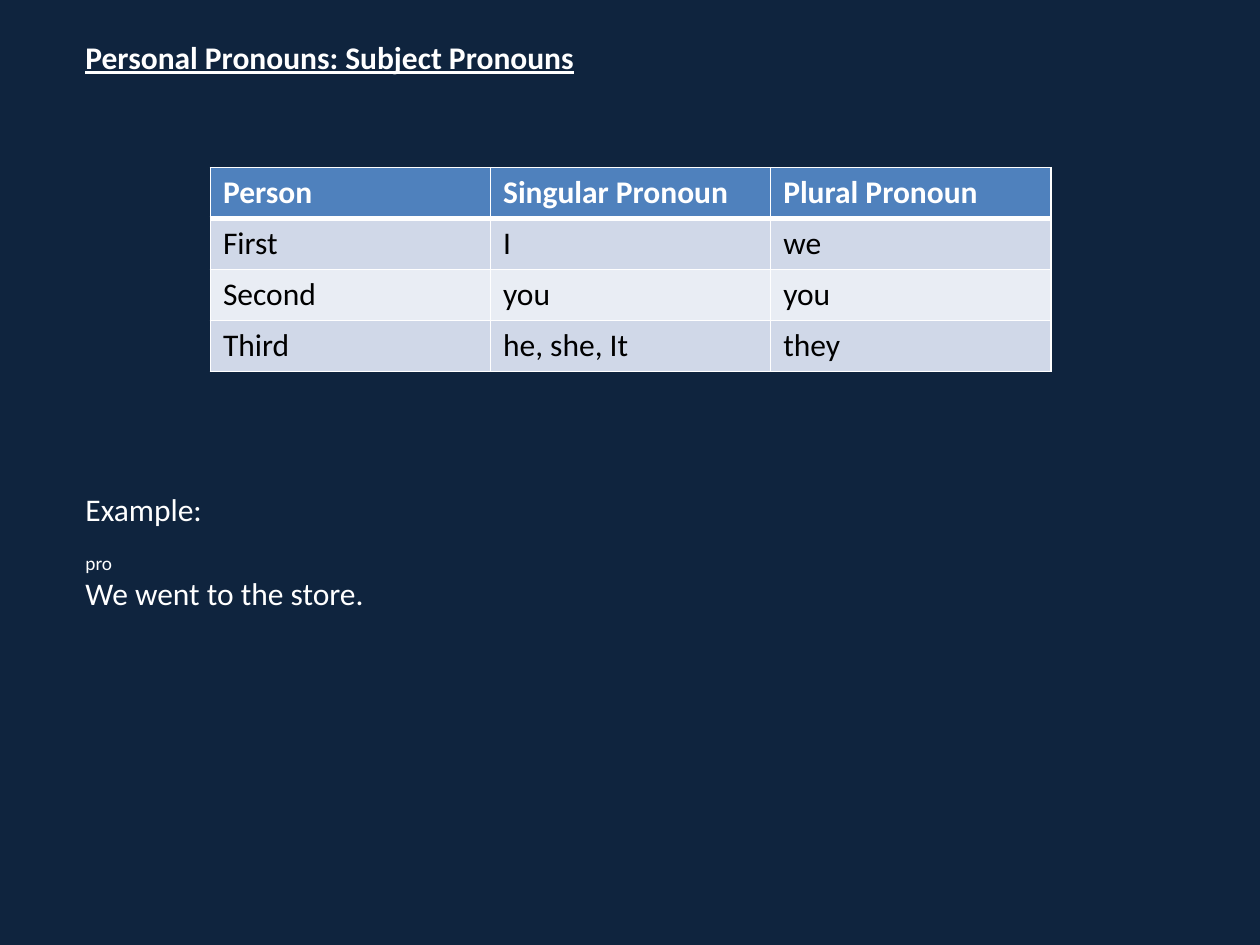
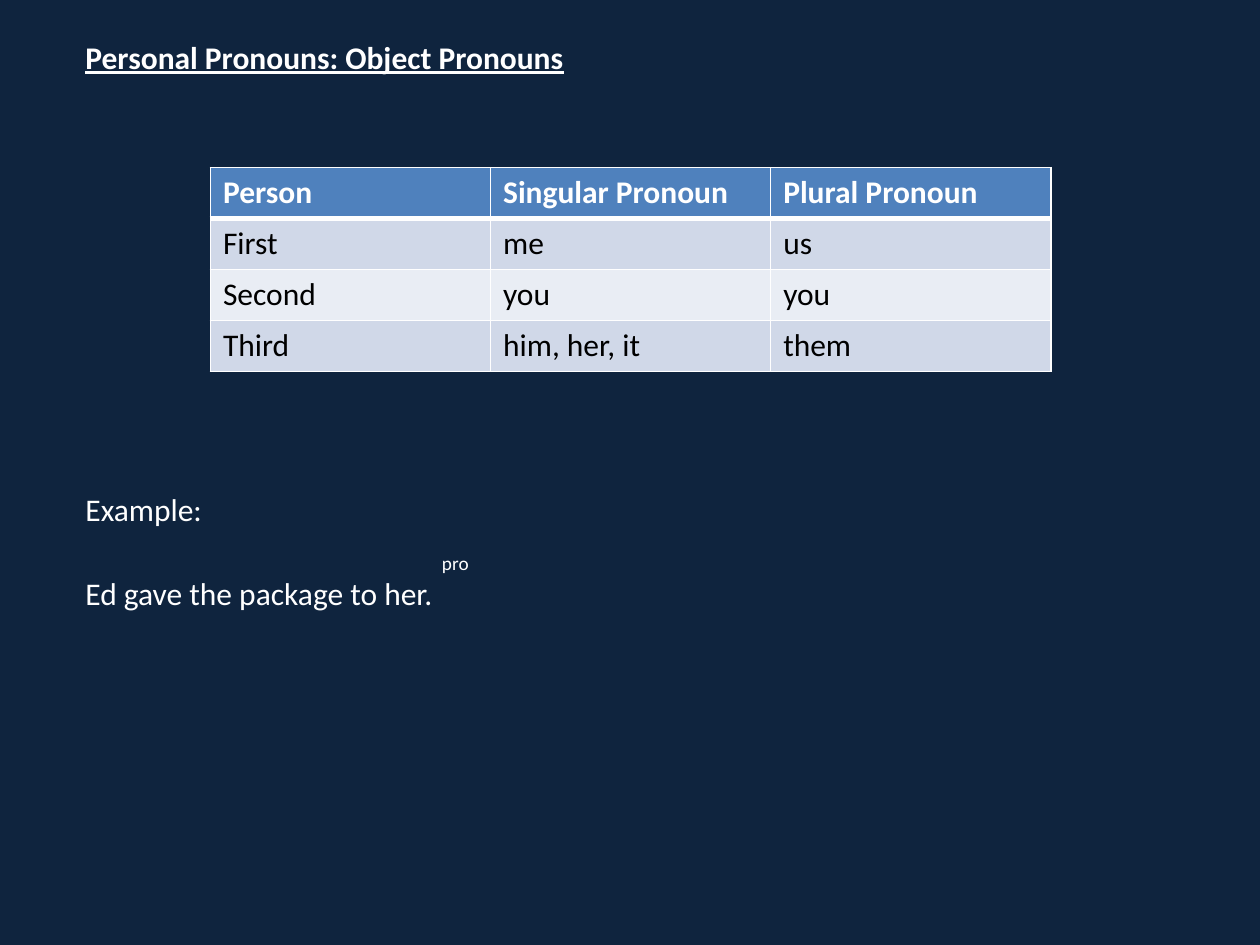
from lxml import etree
from pptx import Presentation
from pptx.dml.color import RGBColor
from pptx.oxml.ns import qn
from pptx.util import Inches, Pt

NAVY = RGBColor(0x0F, 0x24, 0x3E)
WHITE = RGBColor(0xFF, 0xFF, 0xFF)
BLACK = RGBColor(0x00, 0x00, 0x00)
HEADER_BLUE = RGBColor(0x4F, 0x81, 0xBD)
BAND_DARK = RGBColor(0xD0, 0xD8, 0xE8)
BAND_LIGHT = RGBColor(0xE9, 0xED, 0xF4)
FONT = "Calibri"
BODY_SIZE = 18
NOTE_SIZE = 11
HEADER = ("Person", "Singular Pronoun", "Plural Pronoun")


class Deck:
    """Builds pronoun slides in one shared style."""

    def __init__(self):
        self.prs = Presentation()
        self.prs.slide_width = Inches(10)
        self.prs.slide_height = Inches(7.5)
        self.s = None

    def add_slide(self):
        self.s = self.prs.slides.add_slide(self.prs.slide_layouts[6])
        fill = self.s.background.fill
        fill.solid()
        fill.fore_color.rgb = NAVY

    def style(self, p, size=BODY_SIZE, color=WHITE, bold=False):
        p.font.name = FONT
        p.font.size = Pt(size)
        p.font.color.rgb = color
        p.font.bold = bold

    def add_text(self, title, sentence, label_indent):
        sp = self.s.shapes.add_textbox(Inches(0.58), Inches(0.25), Inches(9.17), Inches(6.83))
        tf = sp.text_frame
        tf.word_wrap = True
        tf.text = "\n".join((title, "Example:", "pro", sentence))
        heading, example, label, line = tf.paragraphs
        self.style(heading, bold=True)
        heading.font.underline = True
        self.style(example)
        example.space_before = Pt(237)
        self.style(label, NOTE_SIZE)
        label.space_before = Pt(13)
        label._p.get_or_add_pPr().set("marL", str(Inches(label_indent)))
        self.style(line)

    def add_borders(self, cell, top, bottom):
        tc_pr = cell._tc.get_or_add_tcPr()
        for side, width in (("L", 1), ("R", 1), ("T", top), ("B", bottom)):
            ln = etree.SubElement(tc_pr, qn(f"a:ln{side}"), w=str(Pt(width)))
            fill = etree.SubElement(ln, qn("a:solidFill"))
            etree.SubElement(fill, qn("a:srgbClr"), val=str(WHITE))

    def add_table(self, rows):
        rows = (HEADER, *rows)
        frame = self.s.shapes.add_table(len(rows), len(HEADER), Inches(1.67), Inches(1.33),
                                        Inches(6.67), Inches(1.62))
        table = frame.table
        for r, values in enumerate(rows):
            is_header = r == 0
            band = HEADER_BLUE if is_header else (BAND_LIGHT, BAND_DARK)[r % 2]
            for c, value in enumerate(values):
                cell = table.cell(r, c)
                cell.text = value
                self.style(cell.text_frame.paragraphs[0],
                           color=WHITE if is_header else BLACK, bold=is_header)
                self.add_borders(cell, 3 if r == 1 else 1, 3 if is_header else 1)
                cell.fill.solid()
                cell.fill.fore_color.rgb = band

    def add_pronoun_slide(self, title, rows, sentence, label_indent):
        self.add_slide()
        self.add_text(title, sentence, label_indent)
        self.add_table(rows)


def main():
    deck = Deck()
    deck.add_pronoun_slide(
        "Personal Pronouns: Subject Pronouns",
        (("First", "I", "we"), ("Second", "you", "you"), ("Third", "he, she, It", "they")),
        "We went to the store.", 0)
    deck.add_pronoun_slide(
        "Personal Pronouns: Object Pronouns",
        (("First", "me", "us"), ("Second", "you", "you"), ("Third", "him, her, it", "them")),
        "Ed gave the package to her.", 2.83)
    deck.prs.save("out.pptx")


if __name__ == "__main__":
    main()
